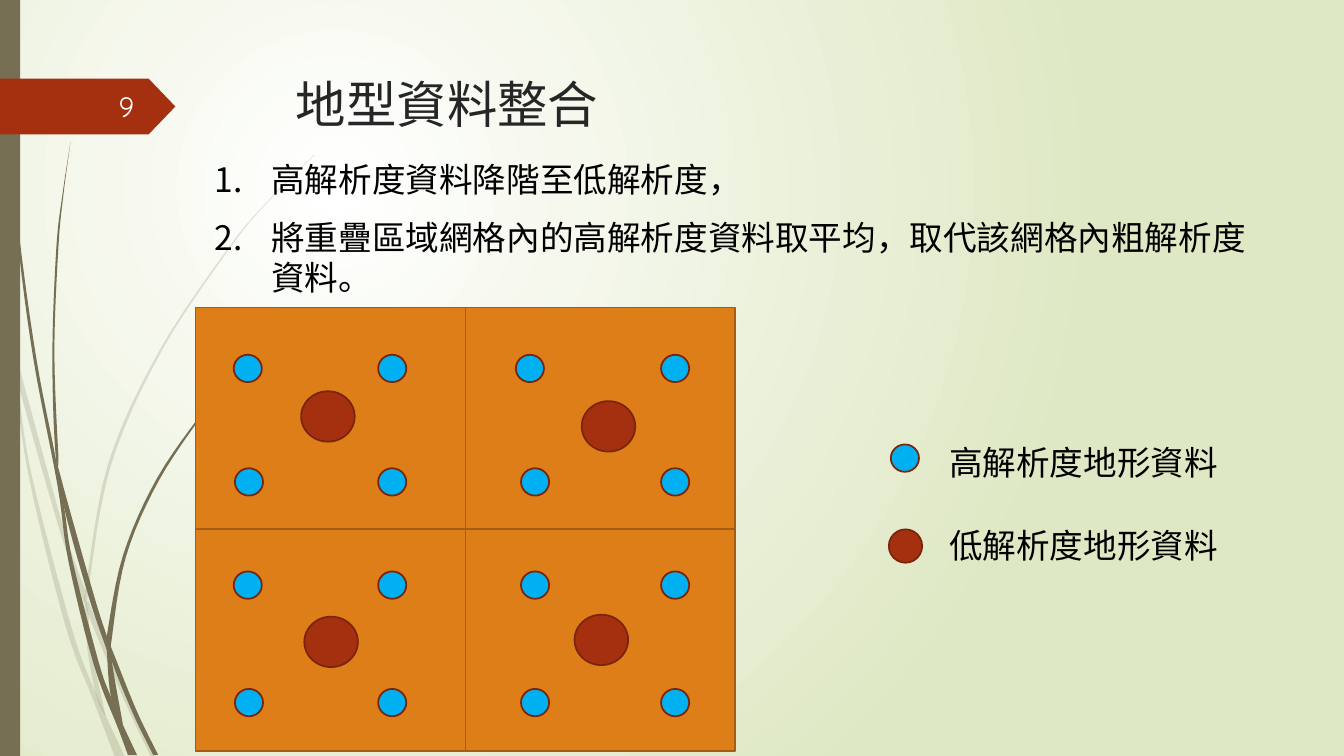
from lxml.etree import SubElement
from pptx import Presentation
from pptx.dml.color import RGBColor
from pptx.enum.shapes import MSO_SHAPE
from pptx.enum.text import MSO_ANCHOR, PP_ALIGN
from pptx.oxml.ns import qn
from pptx.util import Cm, Pt

OLIVE, RUST, RUST_EDGE = "766F54", "A53010", "7A240C"
ORANGE, ORANGE_EDGE, BLUE = "DE7E18", "A45D12", "00B0F0"
FONT = "Times New Roman"

BLADE_UNIT = Cm(0.0254)
PALE_BLADES = [
    ([(0, 299), (11, 350), (28, 470), (65, 621), (92, 693), (114, 751)],
     [(0, 282), (9, 322), (17, 376), (31, 469), (70, 619), (93, 683), (124, 751)]),
    ([(14, 345), (17, 376), (58, 522), (84, 599)],
     [(14, 345), (62, 520), (85, 586)]),
    ([(312, 153), (268, 197), (228, 244), (158, 348), (107, 461), (85, 584),
      (84, 599), (87, 646), (96, 692), (105, 711)],
     [(312, 154), (268, 198), (229, 245), (160, 349), (110, 462), (88, 584),
      (88, 610), (91, 646), (105, 711)]),
    ([(88, 596), (88, 610), (123, 694), (150, 751)],
     [(88, 596), (92, 607), (127, 692), (155, 751)]),
]
DARK_BLADES = [
    ([(3, 0), (7, 110), (17, 233), (33, 355), (57, 481), (68, 557), (93, 659),
      (117, 722), (127, 749)],
     [(4, 0), (8, 109), (19, 232), (36, 355), (55, 453), (64, 505), (72, 556),
      (98, 657), (110, 691), (122, 719), (136, 749)]),
    ([(70, 141), (62, 193), (56, 245), (52, 349), (55, 449), (64, 505),
      (88, 592), (106, 645)],
     [(70, 141), (63, 193), (58, 245), (54, 349), (58, 453), (60, 472),
      (93, 590), (106, 631)]),
    ([(260, 344), (231, 373), (204, 405), (156, 474), (122, 551), (106, 631),
      (106, 645), (110, 691), (122, 719)],
     [(261, 344), (231, 374), (205, 406), (158, 476), (125, 552), (111, 633),
      (111, 656), (122, 719)]),
    ([(106, 631), (111, 656), (132, 708), (152, 749)],
     [(106, 631), (113, 649), (136, 706), (157, 749)]),
]

CELL_WIDTH, CELL_HEIGHT = 6.8, 5.59
GRID_LEFT, GRID_TOP = 4.93, 7.75
FINE_ROWS = [
    (8.94, (5.89, 9.53, 13.0, 16.66)),
    (11.8, (5.92, 9.53, 13.13, 16.66)),
    (14.4, (5.89, 9.53, 13.13, 16.66)),
    (17.36, (5.92, 9.53, 13.13, 16.66)),
]
COARSE_DOTS = [(7.59, 9.86), (14.66, 10.11), (7.67, 15.54), (14.48, 15.49)]


def color(value):
    return RGBColor.from_string(value)


def paint(shape, fill, edge=None):
    shape.shadow.inherit = False
    shape.fill.solid()
    shape.fill.fore_color.rgb = color(fill)
    if edge:
        shape.line.color.rgb = color(edge)
        shape.line.width = Pt(1.25)
    else:
        shape.line.fill.background()


def add_figure(page, kind, left, top, width, height, fill, edge=None):
    shape = page.shapes.add_shape(kind, Cm(left), Cm(top), Cm(width), Cm(height))
    paint(shape, fill, edge)
    return shape


def add_dot(page, left, top, width, height, fill):
    add_figure(page, MSO_SHAPE.OVAL, left, top, width, height, fill, RUST_EDGE)


def add_text(page, left, top, width, height, lines, size, ink="000000", font=FONT, gaps=()):
    box = page.shapes.add_textbox(Cm(left), Cm(top), Cm(width), Cm(height))
    frame = box.text_frame
    frame.word_wrap = True
    frame.text = "\n".join(lines)
    for para in frame.paragraphs:
        for span in para.runs:
            span.font.name = font
            span.font.size = Pt(size)
            span.font.color.rgb = color(ink)
    for para, gap in zip(frame.paragraphs, gaps):
        para.space_after = Pt(gap)
    return frame


def number_paragraphs(frame):
    for para in frame.paragraphs:
        properties = para._p.get_or_add_pPr()
        properties.set("marL", str(Cm(1.43)))
        properties.set("indent", str(Cm(-1.43)))
        SubElement(properties, qn("a:buFont"), typeface="+mj-lt")
        SubElement(properties, qn("a:buAutoNum"), type="arabicPeriod")


def smooth_curve(knots, steps=6):
    padded = [knots[0], *knots, knots[-1]]
    points = []
    for a, b, c, d in zip(padded, padded[1:], padded[2:], padded[3:]):
        for step in range(steps):
            t = step / steps
            points.append(tuple(
                q + t * (r - p) / 2 + t**2 * (p - 2.5 * q + 2 * r - s / 2)
                + t**3 * (1.5 * (q - r) + (s - p) / 2)
                for p, q, r, s in zip(a, b, c, d)))
    return points + [knots[-1]]


def add_blade(page, near, far, alpha=None):
    outline = smooth_curve(near) + smooth_curve(far)[::-1]
    points = [(x * BLADE_UNIT, y * BLADE_UNIT) for x, y in outline]
    builder = page.shapes.build_freeform(*points[0], scale=1.0)
    builder.add_line_segments(points[1:], close=True)
    blade = builder.convert_to_shape()
    paint(blade, OLIVE)
    if alpha:
        tint = blade._element.spPr.find(qn("a:solidFill"))[0]
        SubElement(tint, qn("a:alpha"), val=str(alpha * 1000))


def set_background(page):
    fill = page.background.fill
    fill.gradient()
    for stop, value in zip(fill.gradient_stops, ("FFFFFF", "DFE8C4")):
        stop.color.rgb = color(value)
    gradient = page._element.find(".//" + qn("a:gradFill"))
    linear = gradient.find(qn("a:lin"))
    circle = SubElement(gradient, qn("a:path"), path="circle")
    SubElement(circle, qn("a:fillToRect"), l="50000", t="50000", r="100000", b="100000")
    gradient.replace(linear, circle)


def add_decoration(page):
    for near, far in PALE_BLADES:
        add_blade(page, near, far, alpha=20)
    for near, far in DARK_BLADES:
        add_blade(page, near, far)
    add_figure(page, MSO_SHAPE.RECTANGLE, 0, 0, 0.51, 19.05, OLIVE)
    tag = add_figure(page, MSO_SHAPE.PENTAGON, 0, 1.98, 4.42, 1.41, RUST)
    tag.adjustments[0] = 0.48


def add_legend(page):
    add_text(page, 23.67, 11.02, 8.28, 3.38, ["高解析度地形資料", "低解析度地形資料"],
             24, gaps=(30, 30))
    add_dot(page, 22.45, 11.2, 0.71, 0.69, BLUE)
    add_dot(page, 22.4, 13.34, 0.84, 0.84, RUST)


def add_terrain_grid(page):
    for row in range(2):
        for column in range(2):
            add_figure(page, MSO_SHAPE.RECTANGLE,
                       GRID_LEFT + column * CELL_WIDTH, GRID_TOP + row * CELL_HEIGHT,
                       CELL_WIDTH, CELL_HEIGHT, ORANGE, ORANGE_EDGE)
    for top, lefts in FINE_ROWS:
        for left in lefts:
            add_dot(page, left, top, 0.71, 0.69, BLUE)
    for left, top in COARSE_DOTS:
        add_dot(page, left, top, 1.35, 1.27, RUST)


def main():
    deck = Presentation()
    deck.slide_width, deck.slide_height = Cm(33.87), Cm(19.05)
    page = deck.slides.add_slide(deck.slide_layouts[6])
    set_background(page)
    add_decoration(page)
    add_text(page, 7.21, 1.73, 24.77, 3.56, ["地型資料整合"], 36, "262626")
    steps = add_text(page, 5.16, 3.89, 26.8, 5.87,
                     ["高解析度資料降階至低解析度，",
                      "將重疊區域網格內的高解析度資料取平均，取代該網格內粗解析度資料。"],
                     24, gaps=(12, 30))
    number_paragraphs(steps)
    add_legend(page)
    add_terrain_grid(page)
    number = add_text(page, 1.47, 2.18, 2.16, 1.02, ["9"], 20, "FEFFFF", "Quicksand")
    number.vertical_anchor = MSO_ANCHOR.MIDDLE
    number.paragraphs[0].alignment = PP_ALIGN.RIGHT
    deck.save("out.pptx")


if __name__ == "__main__":
    main()
